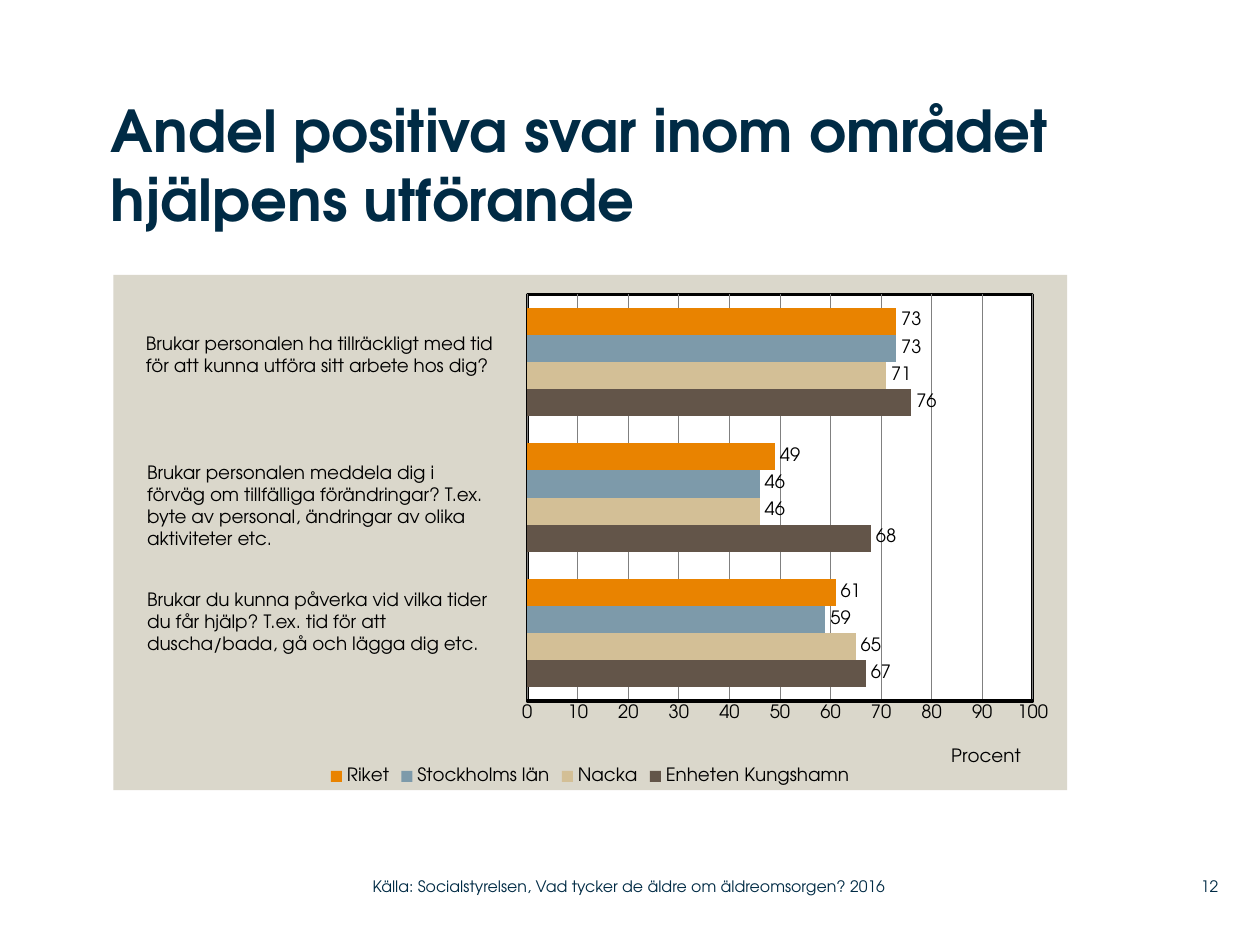
from lxml.etree import fromstring
from pptx import Presentation
from pptx.chart.data import CategoryChartData
from pptx.dml.color import RGBColor
from pptx.enum.chart import (XL_CHART_TYPE as ChartType, XL_LABEL_POSITION as LabelPosition,
                             XL_LEGEND_POSITION as LegendPosition, XL_TICK_MARK as TickMark)
from pptx.enum.text import MSO_ANCHOR as Anchor, MSO_AUTO_SIZE as AutoSize, PP_ALIGN as Align
from pptx.oxml.ns import nsdecls, qn
from pptx.util import Pt

FONT = "TeX Gyre Adventor"
NAVY = RGBColor(0x00, 0x2B, 0x45)
BLACK = RGBColor(0x00, 0x00, 0x00)
GRAY = RGBColor(0x80, 0x80, 0x80)
BROWN = RGBColor(0x63, 0x55, 0x49)
SAND = RGBColor(0xD3, 0xBF, 0x96)
BLUE = RGBColor(0x7D, 0x9A, 0xAA)
ORANGE = RGBColor(0xE9, 0x83, 0x00)


def write_text(box, text, size=10.5, color=BLACK, bold=False, align=Align.LEFT,
               anchor=Anchor.TOP, margins=True, auto_size=AutoSize.NONE):
    frame = box.text_frame
    frame.text = text
    frame.word_wrap = True
    frame.auto_size = auto_size
    frame.vertical_anchor = anchor
    if not margins:
        frame.margin_left = frame.margin_top = frame.margin_right = frame.margin_bottom = 0
    for para in frame.paragraphs:
        para.alignment = align
        for span in para.runs:
            span.font.name = FONT
            span.font.size = Pt(size)
            span.font.bold = bold
            span.font.color.rgb = color


def chart_layout(x, y, size=None):
    target, extent = "", ""
    if size:
        target = '<c:layoutTarget val="inner"/>'
        extent = f'<c:w val="{size[0]}"/><c:h val="{size[1]}"/>'
    return fromstring(
        f'<c:layout {nsdecls("c")}><c:manualLayout>{target}<c:xMode val="edge"/>'
        f'<c:yMode val="edge"/><c:x val="{x}"/><c:y val="{y}"/>{extent}'
        '</c:manualLayout></c:layout>')


deck = Presentation()
deck.slide_width, deck.slide_height = Pt(720), Pt(540)
page = deck.slides.add_slide(deck.slide_layouts[5])

# Title
title = page.shapes.title
title.left, title.top, title.width, title.height = Pt(63.4), Pt(54), Pt(547), Pt(102)
write_text(title, "Andel positiva svar inom området hjälpens utförande",
           size=33, color=NAVY, bold=True, margins=False)

# Bar chart: the first series and category are drawn lowest
series_rows = [
    ("Enheten Kungshamn", (67, 68, 76), BROWN),
    ("Nacka", (65, 46, 71), SAND),
    ("Stockholms län", (59, 46, 73), BLUE),
    ("Riket", (61, 49, 73), ORANGE),
]
data = CategoryChartData()
data.categories = ["1", "2", "3"]
for name, values, _ in series_rows:
    data.add_series(name, values)
chart = page.shapes.add_chart(ChartType.BAR_CLUSTERED, Pt(64.8), Pt(157), Pt(545),
                              Pt(294.5), data).chart
chart.has_title = False
chart.font.name = FONT
chart.font.size = Pt(10.5)
chart.font.color.rgb = BLACK
chart.has_legend = True
chart.legend.position = LegendPosition.BOTTOM
chart.legend.include_in_layout = False

plot = chart.plots[0]
plot.gap_width = 100
plot.overlap = 0
plot.vary_by_categories = False
for series, (_, _, color) in zip(plot.series, series_rows):
    series.format.fill.solid()
    series.format.fill.fore_color.rgb = color
    labels = series.data_labels
    labels.show_value = True
    labels.position = LabelPosition.OUTSIDE_END
    labels.font.name = FONT
    labels.font.size = Pt(10.5)

# Axes
chart.category_axis.visible = False
axis = chart.value_axis
axis.minimum_scale, axis.maximum_scale, axis.major_unit = 0, 100, 10
axis.major_tick_mark = axis.minor_tick_mark = TickMark.NONE
axis.format.line.color.rgb = BLACK
axis.format.line.width = Pt(2)
axis.has_major_gridlines = True
axis.major_gridlines.format.line.color.rgb = GRAY
axis.major_gridlines.format.line.width = Pt(0.5)
axis.axis_title.text_frame.text = "Procent"
span = axis.axis_title.text_frame.paragraphs[0].runs[0]
span.font.name = FONT
span.font.size = Pt(10.5)
span.font.bold = False
span.font.color.rgb = BLACK

# Placing of the plot and the axis title, fills of chart and plot
plot_area = chart.element.chart.plotArea
axis_title = plot_area.find(".//" + qn("c:valAx")).find(qn("c:title"))
for parent in (plot_area, axis_title):
    for old in parent.findall(qn("c:layout")):
        parent.remove(old)
plot_area.insert(0, chart_layout(0.434, 0.038, size=(0.53, 0.789)))
axis_title.find(qn("c:tx")).addnext(chart_layout(0.875, 0.91))


def area_format(fill, line):
    return fromstring(f'<c:spPr {nsdecls("c", "a")}><a:solidFill><a:srgbClr val="{fill}"/>'
                      f'</a:solidFill><a:ln w="{Pt(2)}">{line}</a:ln></c:spPr>')


plot_area.append(area_format(
    "FFFFFF", '<a:solidFill><a:srgbClr val="000000"/></a:solidFill>'))
chart.element.chart.addnext(area_format("DAD7CB", "<a:noFill/>"))

# Questions beside the bars
questions = [
    (76.3, 186.5, 215.3, 32.4, "Brukar personalen ha tillräckligt med tid\n"
     "för att kunna utföra sitt arbete hos dig?"),
    (77, 260, 213.8, 58.3, "Brukar personalen meddela dig i förväg om tillfälliga förändringar? "
     "T.ex. byte av personal, ändringar av olika aktiviteter etc."),
    (77, 332.8, 213.8, 45.4, "Brukar du kunna påverka vid vilka tider\n"
     "du får hjälp? T.ex. tid för att\nduscha/bada, gå och lägga dig etc."),
]
for left, top, width, height, text in questions:
    box = page.shapes.add_textbox(Pt(left), Pt(top), Pt(width), Pt(height))
    write_text(box, text, auto_size=AutoSize.SHAPE_TO_FIT_TEXT)

# Source line and page number
for left, width, text, align in [
    (213, 319, "Källa: Socialstyrelsen, Vad tycker de äldre om äldreomsorgen? 2016", Align.LEFT),
    (662.4, 33.8, "12", Align.RIGHT),
]:
    box = page.shapes.add_textbox(Pt(left), Pt(496), Pt(width), Pt(21))
    write_text(box, text, size=9, color=NAVY, align=align, anchor=Anchor.MIDDLE, margins=False)

deck.save("out.pptx")
